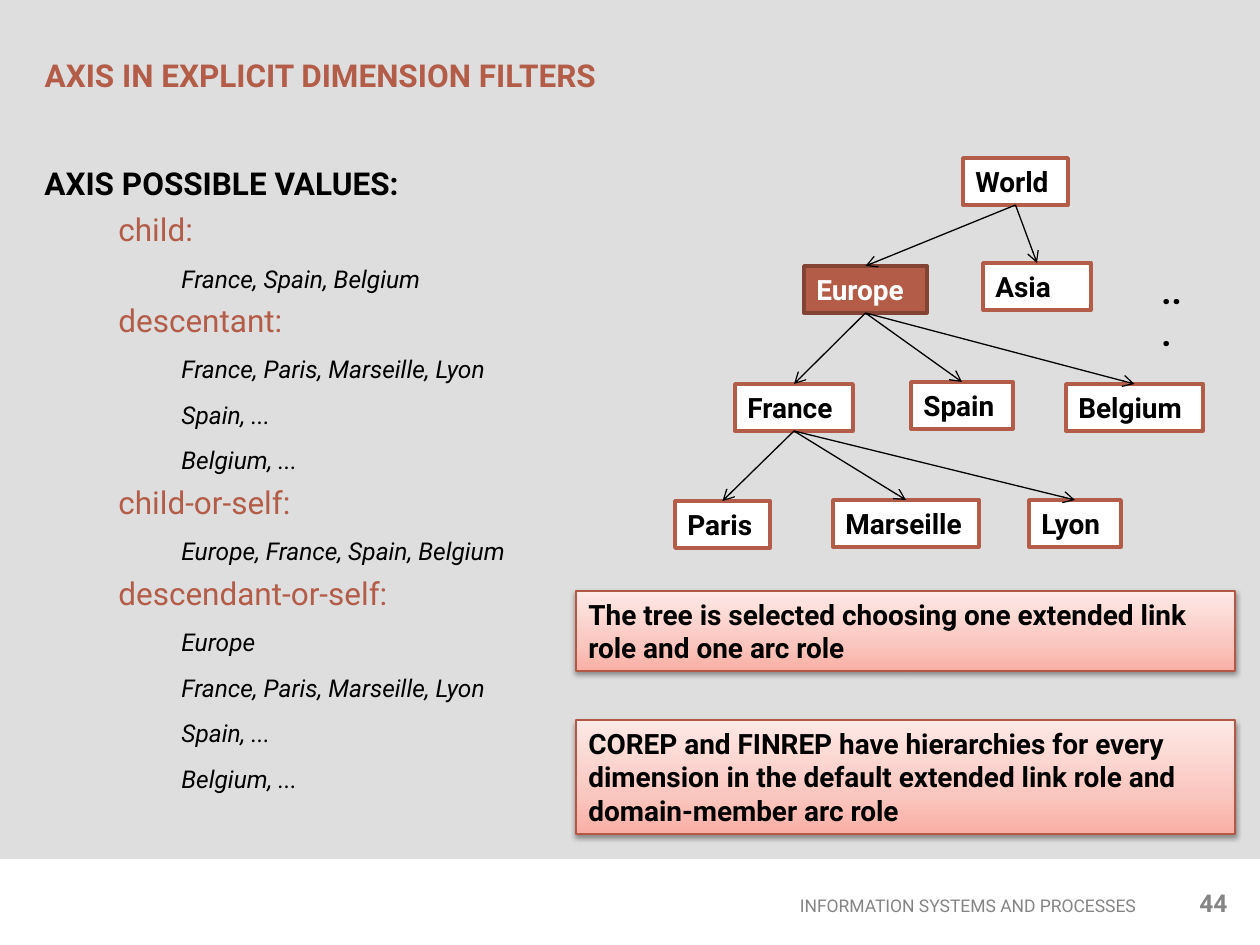
from typing import NamedTuple

from lxml.etree import SubElement
from pptx import Presentation
from pptx.dml.color import RGBColor
from pptx.enum.shapes import MSO_CONNECTOR, MSO_SHAPE
from pptx.enum.text import MSO_ANCHOR, PP_ALIGN
from pptx.oxml import parse_xml
from pptx.oxml.ns import nsdecls, qn
from pptx.util import Emu, Pt

FONT = "Roboto"
RUST, DARK, GREY = "B35C48", "844435", "858585"
BLACK, WHITE = "000000", "FFFFFF"
NODE_H = 47


class Node(NamedTuple):
    name: str
    left: int
    top: int
    width: int
    parent: str = ""


class Level(NamedTuple):
    size: int
    color: str
    bold: bool
    italic: bool
    margin: int
    indent: int


class Note(NamedTuple):
    text: str
    top: int
    height: int


NODES = [
    Node("World", 963, 158, 105),
    Node("Europe", 804, 266, 123, "World"),
    Node("Asia", 983, 263, 108, "World"),
    Node("France", 735, 384, 118, "Europe"),
    Node("Spain", 911, 382, 102, "Europe"),
    Node("Belgium", 1066, 384, 137, "Europe"),
    Node("Paris", 675, 501, 95, "France"),
    Node("Marseille", 833, 500, 146, "France"),
    Node("Lyon", 1029, 500, 92, "France"),
]
LEVELS = [
    Level(18, BLACK, True, False, 0, 0),
    Level(18, RUST, False, False, 74, 0),
    Level(14, BLACK, False, True, 136, 1),
]
VALUES = [
    (0, "AXIS POSSIBLE VALUES:"),
    (1, "child:"),
    (2, "France, Spain, Belgium"),
    (1, "descentant:"),
    (2, "France, Paris, Marseille, Lyon"),
    (2, "Spain, ..."),
    (2, "Belgium, ..."),
    (1, "child-or-self:"),
    (2, "Europe, France, Spain, Belgium"),
    (1, "descendant-or-self:"),
    (2, "Europe"),
    (2, "France, Paris, Marseille, Lyon"),
    (2, "Spain, ..."),
    (2, "Belgium, ..."),
]
NOTES = [
    Note("The tree is selected choosing one extended link role and one arc role", 591, 80),
    Note("COREP and FINREP have hierarchies for every dimension in the default "
         "extended link role and domain-member arc role", 720, 114),
]
STOPS = [(0, "F9AFA5"), (35, "FAC7C0"), (100, "FEE9E6")]


def px(n: int) -> Emu:
    return Emu(round(n * 914400 / 126))


def rgb(code: str) -> RGBColor:
    return RGBColor.from_string(code)


def style(para, size: int, color: str, bold: bool = False, italic: bool = False) -> None:
    for run in para.runs:
        font = run.font
        font.name, font.size = FONT, Pt(size)
        font.bold, font.italic = bold, italic
        font.color.rgb = rgb(color)


def write(shape, text: str, size: int, color: str, bold: bool = True,
          align=PP_ALIGN.LEFT, anchor=MSO_ANCHOR.TOP) -> None:
    frame = shape.text_frame
    frame.text = text
    frame.word_wrap = True
    frame.vertical_anchor = anchor
    para = frame.paragraphs[0]
    para.alignment = align
    style(para, size, color, bold)


def add_text(shapes, left: int, top: int, width: int, height: int):
    return shapes.add_textbox(px(left), px(top), px(width), px(height))


def add_rect(shapes, left: int, top: int, width: int, height: int,
             fill: str, line: str = "", weight: float = 2):
    rect = shapes.add_shape(MSO_SHAPE.RECTANGLE, px(left), px(top), px(width), px(height))
    rect.shadow.inherit = False
    rect.fill.solid()
    rect.fill.fore_color.rgb = rgb(fill)
    if line:
        rect.line.color.rgb = rgb(line)
        rect.line.width = Pt(weight)
    else:
        rect.line.fill.background()
    return rect


def add_node(shapes, node: Node):
    chosen = node.name == "Europe"
    fill, line, ink = (RUST, DARK, WHITE) if chosen else (WHITE, RUST, BLACK)
    box = add_rect(shapes, node.left, node.top, node.width, NODE_H, fill, line)
    write(box, node.name, 16, ink)
    return box


def add_arrow(shapes, start, end) -> None:
    arrow = shapes.add_connector(MSO_CONNECTOR.STRAIGHT, 0, 0, 0, 0)
    arrow.begin_connect(start, 2)
    arrow.end_connect(end, 0)
    arrow.line.color.rgb = rgb(BLACK)
    arrow.line.width = Pt(0.75)
    props = arrow.element.spPr
    SubElement(props.find(qn("a:ln")), qn("a:tailEnd"), type="arrow")
    SubElement(props, qn("a:effectLst"))


def add_note(shapes, note: Note) -> None:
    box = add_rect(shapes, 576, note.top, 659, note.height, WHITE, "B25844", 0.75)
    write(box, note.text, 16, BLACK)
    # Gradient running upwards, with a soft shadow below
    props = box.element.spPr
    stops = "".join(f'<a:gs pos="{pos * 1000}"><a:srgbClr val="{color}"/></a:gs>'
                    for pos, color in STOPS)
    grad = parse_xml(f'<a:gradFill {nsdecls("a")} rotWithShape="1"><a:gsLst>{stops}</a:gsLst>'
                     '<a:lin ang="16200000" scaled="0"/></a:gradFill>')
    props.replace(props.find(qn("a:solidFill")), grad)
    props.find(qn("a:effectLst")).append(parse_xml(
        f'<a:outerShdw {nsdecls("a")} blurRad="40000" dist="20000" dir="5400000" '
        'rotWithShape="0"><a:srgbClr val="000000"><a:alpha val="38000"/></a:srgbClr>'
        '</a:outerShdw>'))


def add_values(shapes) -> None:
    frame = add_text(shapes, 32, 158, 608, 629).text_frame
    frame.word_wrap = True
    for i, (depth, text) in enumerate(VALUES):
        level = LEVELS[depth]
        para = frame.add_paragraph() if i else frame.paragraphs[0]
        para.text = text
        para.level = depth
        para.line_spacing = Pt(21.6)
        para.space_after = Pt(4.4)
        props = para._p.get_or_add_pPr()
        props.set("marL", str(px(level.margin)))
        props.set("indent", str(px(level.indent)))
        style(para, level.size, level.color, level.bold, level.italic)


def main() -> None:
    deck = Presentation()
    deck.slide_width, deck.slide_height = px(1260), px(945)
    slide = deck.slides.add_slide(deck.slide_layouts[5])
    shapes = slide.shapes

    # Title over the grey panel
    title = shapes.title
    title.left, title.top, title.width, title.height = px(32), px(15), px(816), px(120)
    write(title, "AXIS IN EXPLICIT DIMENSION FILTERS", 18, RUST, anchor=MSO_ANCHOR.MIDDLE)
    panel = add_rect(shapes, 0, 0, 1260, 859, "DEDEDE")
    title.element.addprevious(panel.element)

    # Footer
    write(add_text(shapes, 388, 888, 760, 34), "INFORMATION SYSTEMS AND PROCESSES",
          10, GREY, False, PP_ALIGN.RIGHT, MSO_ANCHOR.MIDDLE)
    write(add_text(shapes, 1168, 882, 72, 44), "44", 14, GREY, align=PP_ALIGN.RIGHT)

    # Axis values
    add_values(shapes)

    # Tree
    boxes = {node.name: add_node(shapes, node) for node in NODES}
    write(add_text(shapes, 1149, 263, 54, 55), "...", 20, BLACK)
    for node in NODES:
        if node.parent:
            add_arrow(shapes, boxes[node.parent], boxes[node.name])

    # Notes
    for note in NOTES:
        add_note(shapes, note)

    deck.save("out.pptx")


if __name__ == "__main__":
    main()
